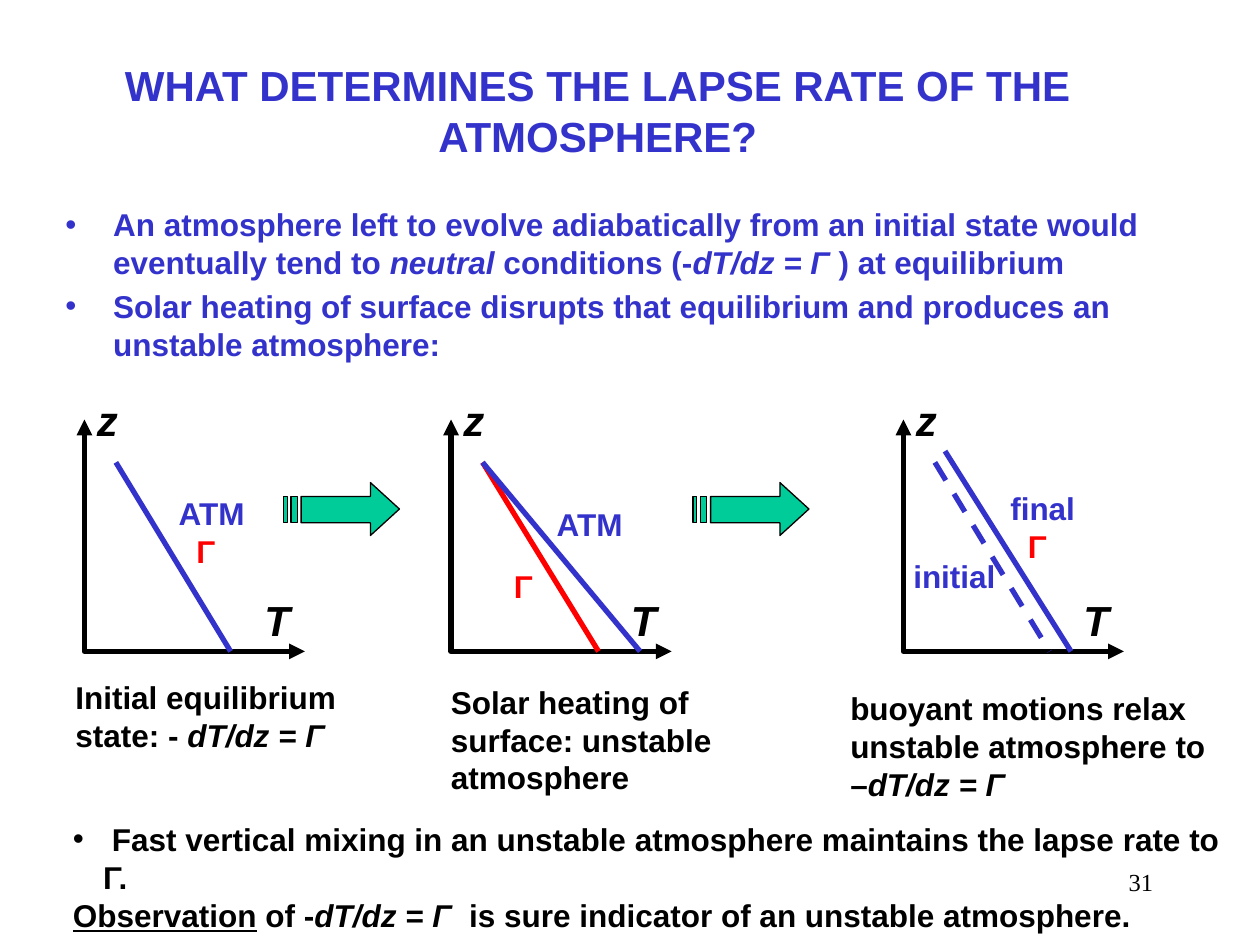
from lxml.etree import SubElement
from pptx import Presentation
from pptx.dml.color import RGBColor
from pptx.enum.dml import MSO_LINE
from pptx.enum.shapes import MSO_CONNECTOR
from pptx.enum.text import MSO_ANCHOR, PP_ALIGN
from pptx.oxml.ns import qn
from pptx.util import Inches, Pt

BLUE = RGBColor(0x33, 0x33, 0xCC)
RED = RGBColor(0xFF, 0x00, 0x00)
BLACK = RGBColor(0x00, 0x00, 0x00)
GREEN = RGBColor(0x00, 0xCC, 0x99)

AXIS_TOP, AXIS_WIDTH, AXIS_HEIGHT = 3.33, 1.75, 1.84
ITALIC = {"italic": True}


def set_indent(paragraph, left, hanging=0, bullet=False):
    properties = paragraph._p.get_or_add_pPr()
    properties.set("marL", str(Inches(left)))
    properties.set("indent", str(-Inches(hanging)))
    if bullet:
        SubElement(properties, qn("a:buFont")).set("typeface", "Arial")
        SubElement(properties, qn("a:buChar")).set("char", "•")


def add_text(slide, box, paragraphs, size=18, color=BLACK, wrap=True,
             bold=True, font="Arial", align=PP_ALIGN.LEFT, anchor=MSO_ANCHOR.TOP):
    """Each paragraph is a list of (text, style) runs; returns the paragraphs."""
    frame = slide.shapes.add_textbox(*map(Inches, box)).text_frame
    frame.word_wrap = wrap
    frame.vertical_anchor = anchor
    for index, runs in enumerate(paragraphs):
        paragraph = frame.add_paragraph() if index else frame.paragraphs[0]
        paragraph.alignment = align
        for text, style in runs:
            run = paragraph.add_run()
            run.text = text
            run.font.name = font
            run.font.size = Pt(size)
            run.font.bold = bold
            run.font.italic = style.get("italic", False)
            run.font.underline = style.get("underline", False)
            run.font.color.rgb = style.get("color", color)
    return frame.paragraphs


def add_line(slide, start, end, color, dashed=False):
    line = slide.shapes.add_connector(
        MSO_CONNECTOR.STRAIGHT, *map(Inches, (*start, *end)))
    line.line.color.rgb = color
    line.line.width = Pt(3)
    if dashed:
        line.line.dash_style = MSO_LINE.DASH
    SubElement(line._element.spPr, qn("a:effectLst"))


def add_axes(slide, left):
    """Draw z and T axes with their labels, the corner at the lower left."""
    bottom = AXIS_TOP + AXIS_HEIGHT
    builder = slide.shapes.build_freeform(Inches(left), Inches(AXIS_TOP))
    builder.add_line_segments(
        [(Inches(left), Inches(bottom)),
         (Inches(left + AXIS_WIDTH), Inches(bottom))], close=False)
    axes = builder.convert_to_shape()
    axes.shadow.inherit = False
    axes.fill.background()
    axes.line.color.rgb = BLACK
    axes.line.width = Pt(3)
    for end in ("a:headEnd", "a:tailEnd"):
        SubElement(axes.line._get_or_add_ln(), qn(end)).set("type", "triangle")
    for label, x, y in (("z", 0, 3.08), ("T", 1.33, 4.67)):
        add_text(slide, (left + x, y, 0.4, 0.5), [[(label, ITALIC)]],
                 size=24, wrap=False)


def add_striped_arrow(slide, left, top):
    """Draw an arrow with two stripes behind its tail."""
    def stripe(start, end):
        return [(start, 0.11), (start, 0.32), (end, 0.32), (end, 0.11)]

    head = [(0.69, 0), (0.69, 0.11), (0.14, 0.11), (0.14, 0.32),
            (0.69, 0.32), (0.69, 0.42), (0.92, 0.21)]
    builder = None
    for outline in (head, stripe(0.06, 0.11), stripe(0, 0.03)):
        points = [(Inches(left + x), Inches(top + y)) for x, y in outline]
        if builder is None:
            builder = slide.shapes.build_freeform(*points[0])
        else:
            builder.move_to(*points[0])
        builder.add_line_segments(points[1:], close=True)
    arrow = builder.convert_to_shape()
    arrow.shadow.inherit = False
    arrow.fill.solid()
    arrow.fill.fore_color.rgb = GREEN
    arrow.line.color.rgb = BLACK
    arrow.line.width = Pt(0.75)


def add_curve_label(slide, box, text, with_gamma=False):
    """Label a profile in blue, with a red gamma below it if it is neutral."""
    paragraphs = [[(text, {})]]
    if with_gamma:
        paragraphs.append([("Γ", {"color": RED})])
    added = add_text(slide, box, paragraphs, color=BLUE, wrap=False)
    if with_gamma:
        set_indent(added[1], 0.14)


def add_title(slide, box):
    add_text(slide, box,
             [[("WHAT DETERMINES THE LAPSE RATE OF THE ATMOSPHERE?", {})]],
             size=24, color=BLUE, align=PP_ALIGN.CENTER, anchor=MSO_ANCHOR.MIDDLE)


def add_introduction(slide, box):
    paragraphs = add_text(slide, box, [
        [("An atmosphere left to evolve adiabatically from an initial state "
          "would eventually tend to ", {}),
         ("neutral", ITALIC), (" conditions (-", {}),
         ("dT/dz = Γ ", ITALIC), (") at equilibrium", {})],
        [("Solar heating of surface disrupts that equilibrium and produces "
          "an unstable atmosphere:", {})],
    ], color=BLUE)
    for paragraph in paragraphs:
        paragraph.space_before = Pt(3.6)
        set_indent(paragraph, 0.38, 0.38, bullet=True)


def add_initial_state(slide, left):
    bottom = AXIS_TOP + AXIS_HEIGHT
    add_axes(slide, left)
    add_line(slide, (left + 0.25, 3.67), (left + 1.16, bottom), BLUE)
    add_curve_label(slide, (left + 0.65, 3.87, 0.74, 0.7), "ATM", with_gamma=True)
    add_text(slide, (left - 0.17, 5.33, 2.27, 0.7), [
        [("Initial equilibrium", {})],
        [("state: - ", {}), ("dT/dz = Γ", ITALIC)]], wrap=False)


def add_heated_state(slide, left):
    bottom = AXIS_TOP + AXIS_HEIGHT
    add_axes(slide, left)
    add_line(slide, (left + 0.25, 3.67), (left + 1.17, bottom), RED)
    add_line(slide, (left + 1.5, bottom), (left + 0.25, 3.67), BLUE)
    add_text(slide, (left + 0.4, 4.45, 0.35, 0.4), [[("Γ", {})]],
             color=RED, wrap=False)
    add_curve_label(slide, (left + 0.74, 3.96, 0.74, 0.4), "ATM")
    add_text(slide, (left - 0.1, 5.37, 2.27, 1), [
        [("Solar heating of", {})],
        [("surface: unstable", {})],
        [("atmosphere", {})]], wrap=False)


def add_relaxed_state(slide, left):
    bottom = AXIS_TOP + AXIS_HEIGHT
    add_axes(slide, left)
    add_line(slide, (left + 0.25, 3.67), (left + 1.16, bottom), BLUE, dashed=True)
    add_line(slide, (left + 1.33, bottom), (left + 0.33, 3.58), BLUE)
    add_curve_label(slide, (left - 0.02, 4.37, 0.85, 0.4), "initial")
    add_curve_label(slide, (left + 0.75, 3.83, 0.72, 0.7), "final", with_gamma=True)
    add_text(slide, (left - 0.52, 5.42, 3.1, 1.3), [
        [("buoyant motions relax", {})],
        [("unstable atmosphere to –", {}), ("dT/dz = Γ", ITALIC)]])


def add_conclusion(slide, box):
    paragraphs = add_text(slide, box, [
        [(" Fast vertical mixing in an unstable atmosphere maintains the "
          "lapse rate to Γ.", {})],
        [("Observation", {"underline": True}), (" of -", {}),
         ("dT/dz = Γ  ", ITALIC),
         ("is sure indicator of an unstable atmosphere.", {})]])
    set_indent(paragraphs[0], 0.24, 0.24, bullet=True)


def add_page_number(slide, box):
    add_text(slide, box, [[("31", {})]], size=14, bold=False,
             font="Times New Roman", align=PP_ALIGN.RIGHT)


def main():
    presentation = Presentation()
    presentation.slide_width = Inches(10)
    presentation.slide_height = Inches(7.5)
    slide = presentation.slides.add_slide(presentation.slide_layouts[6])

    add_page_number(slide, (7.17, 6.83, 2.08, 0.5))
    add_title(slide, (0.33, 0.25, 8.83, 1.25))
    add_introduction(slide, (0.42, 1.58, 8.75, 4.5))

    # Three stages of the temperature profile
    add_initial_state(slide, 0.67)
    add_heated_state(slide, 3.58)
    add_relaxed_state(slide, 7.17)

    add_conclusion(slide, (0.48, 6.46, 9.52, 0.7))

    # Arrows between the stages
    for left in (2.25, 5.5):
        add_striped_arrow(slide, left, 3.83)

    presentation.save("out.pptx")


if __name__ == "__main__":
    main()
